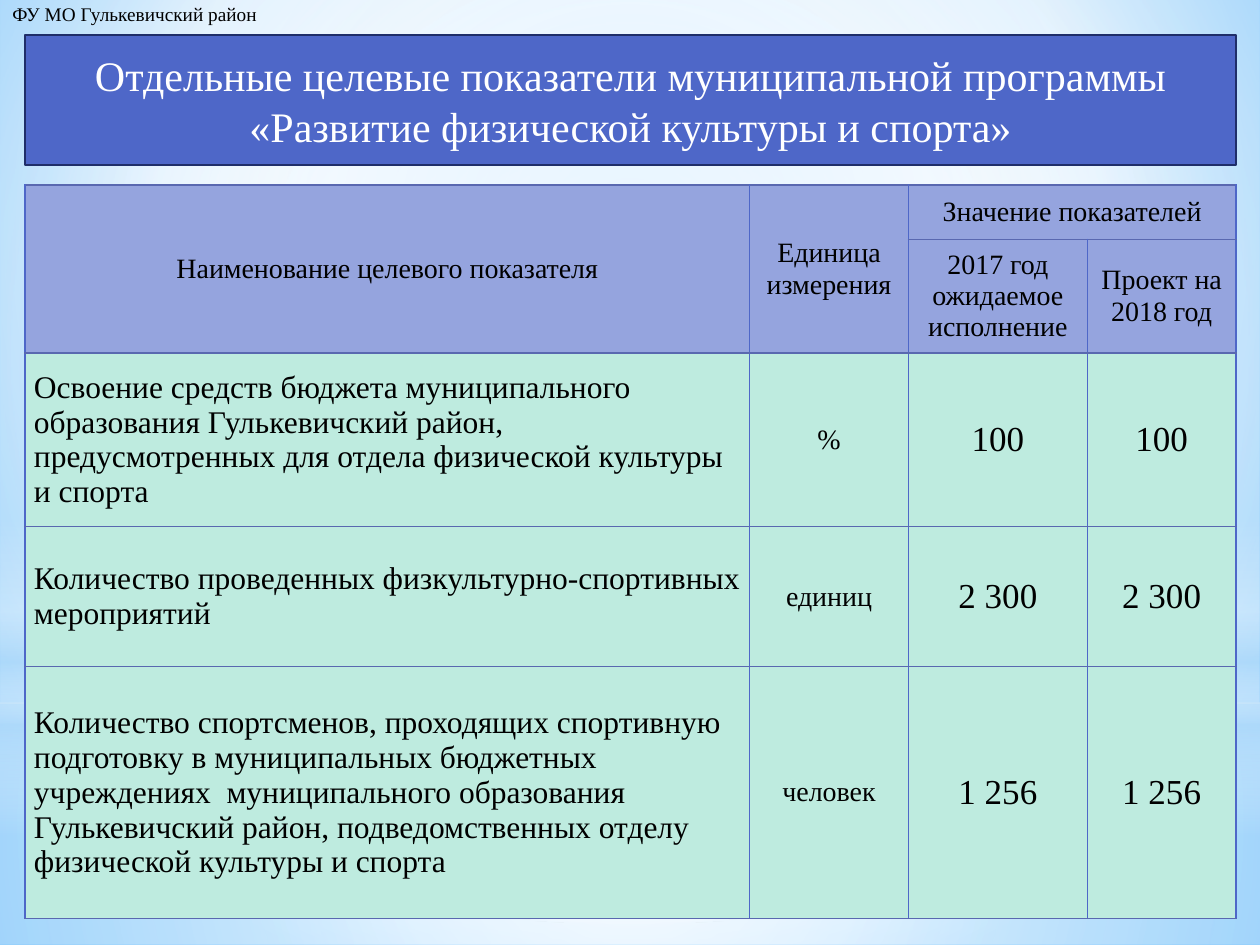
from lxml.etree import SubElement
from pptx import Presentation
from pptx.dml.color import RGBColor
from pptx.enum.shapes import MSO_SHAPE
from pptx.enum.text import MSO_ANCHOR, MSO_AUTO_SIZE, PP_ALIGN
from pptx.oxml import parse_xml
from pptx.oxml.ns import nsdecls, qn
from pptx.util import Inches, Pt

FONT = "Times New Roman"
WHITE = RGBColor(0xFF, 0xFF, 0xFF)
BLACK = RGBColor(0x00, 0x00, 0x00)
PALE_BLUE = RGBColor(0xB4, 0xDC, 0xFA)
SKY = RGBColor(0x9E, 0xD5, 0xFF)
DEEP_SKY = RGBColor(0x5B, 0xB9, 0xFF)
BLUE = RGBColor(0x4E, 0x67, 0xC8)
NAVY = RGBColor(0x1F, 0x2E, 0x69)
RULE_BLUE = RGBColor(0x59, 0x68, 0xB0)
HEADER_FILL = RGBColor(0x95, 0xA4, 0xDE)
BODY_FILL = RGBColor(0xBE, 0xEB, 0xDF)

COLUMNS = [5.75, 1.26, 1.42, 1.18]
ROWS = [0.43, 0.87, 1.38, 1.11, 2]
BODY_SIZES = [18, 16, 20, 20]
HEADER = [
    ["Наименование целевого показателя", "Единица\nизмерения", "Значение показателей", ""],
    ["", "", "2017 год ожидаемое исполнение", "Проект на 2018 год"],
]
BODY = [
    ["Освоение средств бюджета муниципального образования Гулькевичский район, "
     "предусмотренных для отдела физической культуры и спорта", "%", "100", "100"],
    ["Количество проведенных физкультурно-спортивных мероприятий",
     "единиц", "2 300", "2 300"],
    ["Количество спортсменов, проходящих спортивную подготовку в муниципальных бюджетных "
     "учреждениях  муниципального образования Гулькевичский район, подведомственных отделу "
     "физической культуры и спорта", "человек", "1 256", "1 256"],
]


def place(shape, box):
    shape.left, shape.top, shape.width, shape.height = box


def style_text(frame, size, color, align):
    for para in frame.paragraphs:
        para.alignment = align
        for span in para.runs:
            span.font.name = FONT
            span.font.size = Pt(size)
            span.font.bold = False
            span.font.color.rgb = color


def set_gradient(fill, parent, stops, center=None):
    """Fill with (position, colour, opacity) stops: round if center is given, else vertical."""
    fill.background()
    gradient = parse_xml(f'<a:gradFill {nsdecls("a")} rotWithShape="1"><a:gsLst/></a:gradFill>')
    for position, color, opacity in stops:
        stop = SubElement(gradient[0], qn("a:gs"), pos=str(position * 1000))
        tone = SubElement(stop, qn("a:srgbClr"), val=str(color))
        if opacity < 100:
            SubElement(tone, qn("a:alpha"), val=str(opacity * 1000))
    if center:
        shade = SubElement(gradient, qn("a:path"), {"path": "circle"})
        sides = {side: str(share * 1000) for side, share in zip("ltrb", center)}
        SubElement(shade, qn("a:fillToRect"), sides)
    else:
        SubElement(gradient, qn("a:lin"), ang="5400000", scaled="0")
    parent.replace(parent.find(qn("a:noFill")), gradient)


def add_backdrop(page, width, height):
    sky = page.background.fill
    sky.background()
    set_gradient(sky, page._element.find(".//" + qn("p:bgPr")),
                 [(0, SKY, 100), (60, WHITE, 100), (100, DEEP_SKY, 100)], (20, 10, 20, 60))
    middle = (50, 50, 50, 50)
    # Preset, top and height as shares of the slide, stops, gradient center
    layers = [
        (MSO_SHAPE.RECTANGLE, 0.744, 0.256,
         [(0, WHITE, 91), (37, WHITE, 76), (100, PALE_BLUE, 79)], middle),
        (MSO_SHAPE.RECTANGLE, 0, 0.744,
         [(0, WHITE, 89), (48, WHITE, 62), (100, PALE_BLUE, 79)], middle),
        (MSO_SHAPE.RECTANGLE, 0.55, 0.333,
         [(0, WHITE, 0), (29, WHITE, 30), (45, PALE_BLUE, 40), (55, WHITE, 26),
          (65, PALE_BLUE, 60), (100, WHITE, 0)], None),
        (MSO_SHAPE.OVAL, 0.233, 0.744, [(0, WHITE, 100), (56, WHITE, 0)], middle),
    ]
    for preset, top, share, stops, center in layers:
        layer = page.shapes.add_shape(preset, 0, int(top * height), width, int(share * height))
        layer.shadow.inherit = False
        layer.line.fill.background()
        set_gradient(layer.fill, layer._element.spPr, stops, center)


def add_label(page, box):
    label = page.shapes.add_textbox(*box)
    label.text_frame.text = "ФУ МО Гулькевичский район"
    label.text_frame.word_wrap = False
    style_text(label.text_frame, 11, BLACK, PP_ALIGN.LEFT)


def add_heading(page, box):
    heading = page.shapes.title
    place(heading, box)
    properties = heading._element.spPr
    properties.find(qn("a:xfrm")).addnext(parse_xml(
        f'<a:prstGeom {nsdecls("a")} prst="roundRect"><a:avLst/></a:prstGeom>'))
    heading.fill.solid()
    heading.fill.fore_color.rgb = BLUE
    heading.line.color.rgb = NAVY
    heading.line.width = Pt(1.25)
    frame = heading.text_frame
    frame.text = ("Отдельные целевые показатели муниципальной программы "
                  "«Развитие физической культуры и спорта»")
    frame.word_wrap = True
    frame.auto_size = MSO_AUTO_SIZE.NONE
    frame.vertical_anchor = MSO_ANCHOR.MIDDLE
    style_text(frame, 24, WHITE, PP_ALIGN.CENTER)
    page.shapes._spTree.append(heading._element)  # bring to front


def style_cell(cell, fill):
    properties = cell._tc.get_or_add_tcPr()
    for side, color in (("L", BLUE), ("R", BLUE), ("T", RULE_BLUE), ("B", RULE_BLUE)):
        border = SubElement(properties, qn(f"a:ln{side}"), w=str(Pt(1)))
        SubElement(SubElement(border, qn("a:solidFill")), qn("a:srgbClr"), val=str(color))
    cell.fill.solid()
    cell.fill.fore_color.rgb = fill
    cell.vertical_anchor = MSO_ANCHOR.MIDDLE


def add_indicators(page, box):
    table = page.shapes.add_table(len(ROWS), len(COLUMNS), *box).table
    table.first_row = table.horz_banding = False
    for column, share in zip(table.columns, COLUMNS):
        column.width = int(box[2] * share / sum(COLUMNS))
    for row, share in zip(table.rows, ROWS):
        row.height = int(box[3] * share / sum(ROWS))
    for row_index, texts in enumerate(HEADER + BODY):
        in_header = row_index < len(HEADER)
        for column_index, text in enumerate(texts):
            cell = table.cell(row_index, column_index)
            style_cell(cell, HEADER_FILL if in_header else BODY_FILL)
            cell.text_frame.text = text
            size = 16 if in_header else BODY_SIZES[column_index]
            left = not in_header and column_index == 0
            style_text(cell.text_frame, size, BLACK, PP_ALIGN.LEFT if left else PP_ALIGN.CENTER)
            if not in_header:
                cell.margin_left = cell.margin_right = Inches(0.07)
                cell.margin_top = cell.margin_bottom = 0
    # Header spans
    for first, last in (((0, 0), (1, 0)), ((0, 1), (1, 1)), ((0, 2), (0, 3))):
        table.cell(*first).merge(table.cell(*last))


def main():
    deck = Presentation()
    deck.slide_width, deck.slide_height = Inches(10), Inches(7.5)
    page = deck.slides.add_slide(deck.slide_layouts[5])
    margin, content_width = Inches(0.2), Inches(9.61)
    add_backdrop(page, deck.slide_width, deck.slide_height)
    add_label(page, (0, Inches(-0.03), Inches(2.18), Inches(0.29)))
    add_indicators(page, (margin, Inches(1.47), content_width, Inches(sum(ROWS))))
    add_heading(page, (margin, Inches(0.28), content_width, Inches(1.03)))
    deck.save("out.pptx")


if __name__ == "__main__":
    main()
